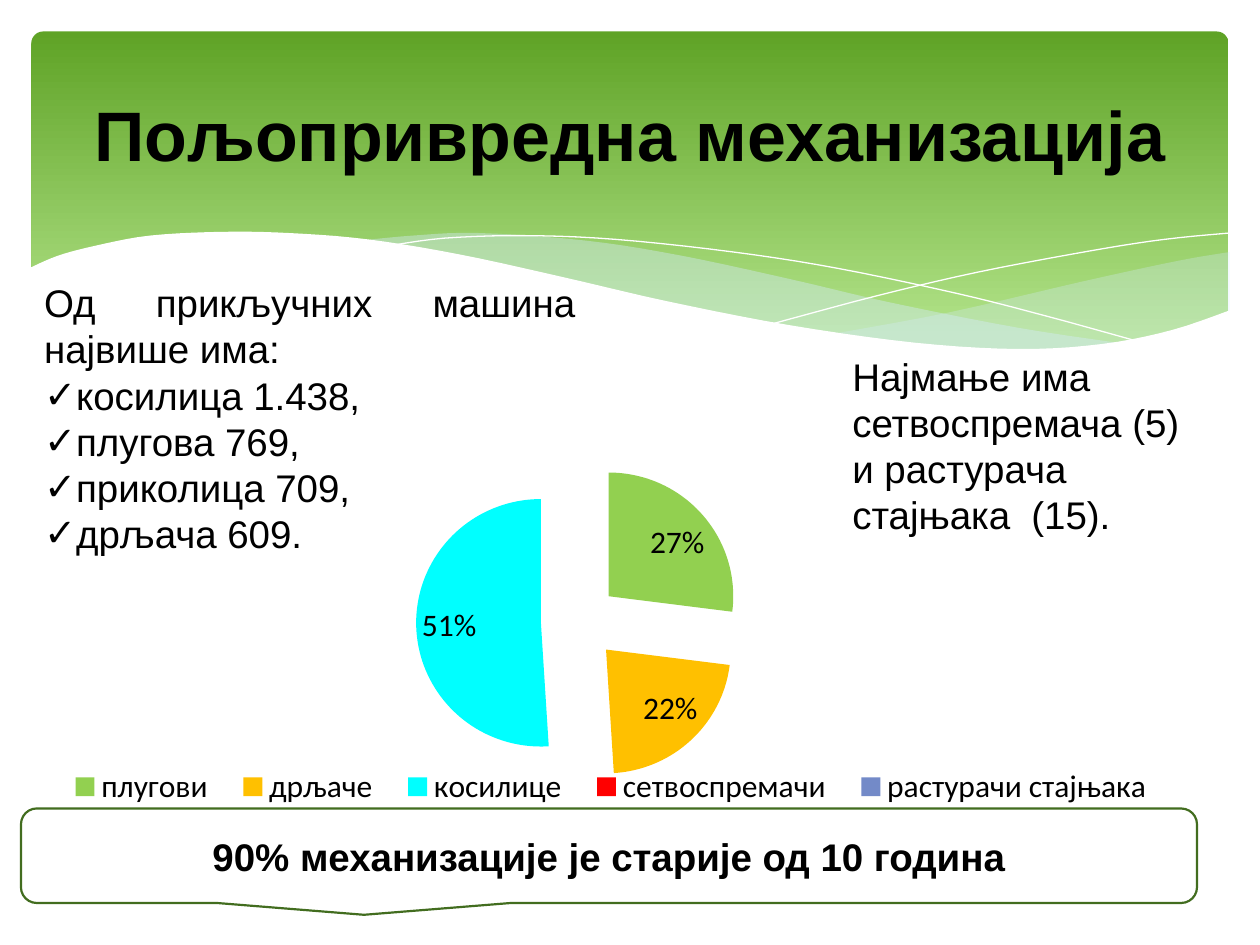
from lxml import etree
from pptx import Presentation
from pptx.chart.data import CategoryChartData
from pptx.dml.color import RGBColor
from pptx.enum.chart import XL_CHART_TYPE, XL_LABEL_POSITION, XL_LEGEND_POSITION
from pptx.enum.shapes import MSO_SHAPE
from pptx.enum.text import MSO_ANCHOR, MSO_AUTO_SIZE, PP_ALIGN
from pptx.oxml import parse_xml
from pptx.oxml.ns import nsdecls, qn
from pptx.util import Inches, Pt

PIE = XL_CHART_TYPE.PIE
BEST_FIT = XL_LABEL_POSITION.BEST_FIT
LEGEND_TOP = XL_LEGEND_POSITION.TOP
ROUNDED, CALLOUT = MSO_SHAPE.ROUNDED_RECTANGLE, MSO_SHAPE.ROUNDED_RECTANGULAR_CALLOUT
MIDDLE, TOP = MSO_ANCHOR.MIDDLE, MSO_ANCHOR.TOP
LEFT, CENTER, JUSTIFY = PP_ALIGN.LEFT, PP_ALIGN.CENTER, PP_ALIGN.JUSTIFY
NO_AUTOFIT = MSO_AUTO_SIZE.NONE

COLORS = {name: RGBColor.from_string(value) for name, value in {
    "text": "000000", "paper": "FFFFFF", "band_top": "5FA326",
    "band_bottom": "B2E389", "wave": "D6ECFF", "callout_line": "426D1F",
    "плугови": "92D050", "дрљаче": "FFC000", "косилице": "00FFFF",
    "сетвоспремачи": "FF0000", "растурачи стајњака": "738AC8",
}.items()}

prs = Presentation()
prs.slide_width, prs.slide_height = Inches(10), Inches(7.5)
CELL = prs.slide_width / 120  # grid of 120 columns by 90 rows
slide = prs.slides.add_slide(prs.slide_layouts[1])
shapes = slide.shapes


def grid(*cells):
    return [round(cell * CELL) for cell in cells]


def smooth(knots, steps=5):
    """Points of a Catmull-Rom curve through the knots, in EMU."""
    ends = [knots[0], *knots, knots[-1]]
    points = []
    for a, b, c, d in zip(ends, ends[1:], ends[2:], ends[3:]):
        for t in (step / steps for step in range(steps)):
            points.append(tuple(Inches(
                q + (r - p) * t / 2 + (2 * p - 5 * q + 4 * r - s) * t**2 / 2
                + (3 * q - p - 3 * r + s) * t**3 / 2) for p, q, r, s in zip(a, b, c, d)))
    return points + [tuple(Inches(value) for value in knots[-1])]


# Green band with waves
band = shapes.add_shape(ROUNDED, *grid(3, 3, 114, 32.4))
band.adjustments[0] = 0.034
band.shadow.inherit = False
band.line.fill.background()
band.fill.gradient()
band.fill.gradient_angle = 270
for stop, position, color in zip(band.fill.gradient_stops, (0, 0.9), ("band_top", "band_bottom")):
    stop.position = position
    stop.color.rgb = COLORS[color]

# Each wave: its edges in order, fill colour (None for a line), opacity in percent
waves = [
    ([[(9.76, 2), (9.35, 2.07), (8.61, 2.23), (7.53, 2.48), (6.61, 2.65)],
      [(6.61, 2.65), (7.19, 2.72), (8.03, 2.78), (8.81, 2.73), (9.35, 2.62), (9.76, 2.47)]],
     "wave", 29),
    ([[(8.93, 2.73), (8.07, 2.6), (7.06, 2.4), (6.29, 2.22), (5.41, 2.03), (4.65, 1.91),
       (3.8, 1.85), (3.28, 1.87), (2.86, 1.91)],
      [(2.86, 1.91), (3.62, 2.03), (4.49, 2.22), (5.66, 2.48), (6.65, 2.66), (7.48, 2.76),
       (8.18, 2.78), (8.93, 2.73)]], "wave", 40),
    ([[(3.09, 1.95), (3.53, 1.89), (4.16, 1.87), (4.89, 1.9), (5.82, 2), (6.65, 2.13),
       (7.6, 2.33), (8.31, 2.51), (9.07, 2.72)]], None, 100),
    ([[(6.13, 2.57), (6.95, 2.35), (7.76, 2.16), (8.66, 1.99), (9.24, 1.9), (9.75, 1.85)]],
     None, 100),
    ([[(9.77, 2.46), (9.3, 2.62), (8.75, 2.73), (8.09, 2.77), (7.26, 2.72), (6.26, 2.58),
       (5.29, 2.39), (4.47, 2.2), (3.65, 2.02), (2.92, 1.9), (2.3, 1.85), (1.77, 1.84),
       (1.19, 1.87), (0.76, 1.95), (0.46, 2.03), (0.23, 2.13)],
      [(0.23, 3.29), (9.77, 3.29)]], "paper", 100),
]
for edges, color, opacity in waves:
    points = [point for edge in edges for point in smooth(edge)]
    builder = shapes.build_freeform(*points[0])
    builder.add_line_segments(points[1:], close=color is not None)
    wave = builder.convert_to_shape()
    wave.shadow.inherit = False
    if color is None:
        wave.fill.background()
        wave.line.color.rgb = COLORS["paper"]
        wave.line.width = Pt(0)
        continue
    wave.line.fill.background()
    wave.fill.solid()
    wave.fill.fore_color.rgb = COLORS[color]
    if opacity < 100:
        rgb = wave.fill._xPr.find(".//" + qn("a:srgbClr"))
        etree.SubElement(rgb, qn("a:alpha")).set("val", str(opacity * 1000))

# Pie chart of the machines
shares = {"плугови": 27, "дрљаче": 22, "косилице": 51, "сетвоспремачи": 0,
          "растурачи стајњака": None}
data = CategoryChartData()
data.categories = list(shares)
data.add_series("Series 1", list(shares.values()))
chart = shapes.add_chart(PIE, *grid(0, 45, 120, 36), data).chart
chart.has_title = False
chart.font.name, chart.font.size = "Calibri", Pt(18)
chart.font.color.rgb = COLORS["text"]
chart.has_legend = True
chart.legend.position = LEGEND_TOP
chart.legend.include_in_layout = False

plot = chart.plots[0]
plot.vary_by_categories = True
plot.has_data_labels = True
label_format = {"show_percentage": True, "show_value": False, "number_format": "0%",
                "number_format_is_linked": False, "position": BEST_FIT}
for attribute, value in label_format.items():
    setattr(plot.data_labels, attribute, value)

machines = plot.series[0]
for index, machine in enumerate(shares):
    slice_fill = machines.points[index].format.fill
    slice_fill.solid()
    slice_fill.fore_color.rgb = COLORS[machine]
    explosion = parse_xml(f'<c:explosion {nsdecls("c")} val="31"/>')
    machines._element.findall(qn("c:dPt"))[index].find(qn("c:spPr")).addprevious(explosion)

plot_area = chart._chartSpace.chart.plotArea
for old in plot_area.findall(qn("c:layout")):
    plot_area.remove(old)
legend = chart.legend._element
for old in legend.findall(qn("c:layout")):
    legend.remove(old)
layouts = [
    (plot_area, 0, '<c:layoutTarget val="inner"/>', (0.04, 0.06, 0.84, 0.66)),
    (legend, 1, "", (0.04, 0.76, 0.89, 0.14)),
]
for owner, place, target, box in layouts:
    modes = "".join(f'<c:{axis}Mode val="edge"/>' for axis in "xy")
    sizes = "".join(f'<c:{side} val="{share}"/>' for side, share in zip("xywh", box))
    owner.insert(place, parse_xml(
        f'<c:layout {nsdecls("c")}><c:manualLayout>{target}{modes}{sizes}'
        "</c:manualLayout></c:layout>"))

# Texts
title, machine_list = shapes.title, slide.placeholders[1]
fewest = shapes.add_textbox(*grid(80, 33, 36, 22.5))
callout = shapes.add_shape(CALLOUT, *grid(2, 77, 112, 9))
callout.shadow.inherit = False
callout.fill.solid()
callout.fill.fore_color.rgb = COLORS["paper"]
callout.line.color.rgb = COLORS["callout_line"]
callout.line.width = Pt(1.25)

texts = [
    (title, (6, 4.5, 108, 16.5), MIDDLE, CENTER, 40, True, ["Пољопривредна механизација"]),
    (machine_list, (3, 26, 53, 31.5), TOP, JUSTIFY, 22, False,
     ["Од прикључних машина највише има:", "косилица 1.438,", "плугова 769,",
      "приколица 709,", "дрљача 609."]),
    (fewest, (80, 33, 36, 22.5), TOP, LEFT, 22, False,
     ["Најмање има сетвоспремача (5) и растурача стајњака  (15)."]),
    (callout, (2, 77, 112, 9), MIDDLE, CENTER, 22, True,
     ["90% механизације је старије од 10 година"]),
]
for holder, box, anchor, alignment, size, bold, lines in texts:
    holder.left, holder.top, holder.width, holder.height = grid(*box)
    shapes._spTree.append(holder._element)
    frame = holder.text_frame
    frame.text = "\n".join(lines)
    frame.word_wrap, frame.auto_size, frame.vertical_anchor = True, NO_AUTOFIT, anchor
    for paragraph in frame.paragraphs:
        paragraph.alignment, paragraph.space_before = alignment, Pt(0)
        font_format = {"name": "Arial", "size": Pt(size), "bold": bold}
        for attribute, value in font_format.items():
            setattr(paragraph.runs[0].font, attribute, value)
        paragraph.runs[0].font.color.rgb = COLORS["text"]

for index, paragraph in enumerate(machine_list.text_frame.paragraphs):
    properties = paragraph._p.get_or_add_pPr()
    hanging = Inches(0.25) if index else 0
    properties.set("marL", str(hanging))
    properties.set("indent", str(-hanging))
    if index:
        etree.SubElement(properties, qn("a:buFont")).set("typeface", "Arial")
        etree.SubElement(properties, qn("a:buChar")).set("char", "✓")
    else:
        etree.SubElement(properties, qn("a:buNone"))

prs.save("out.pptx")
